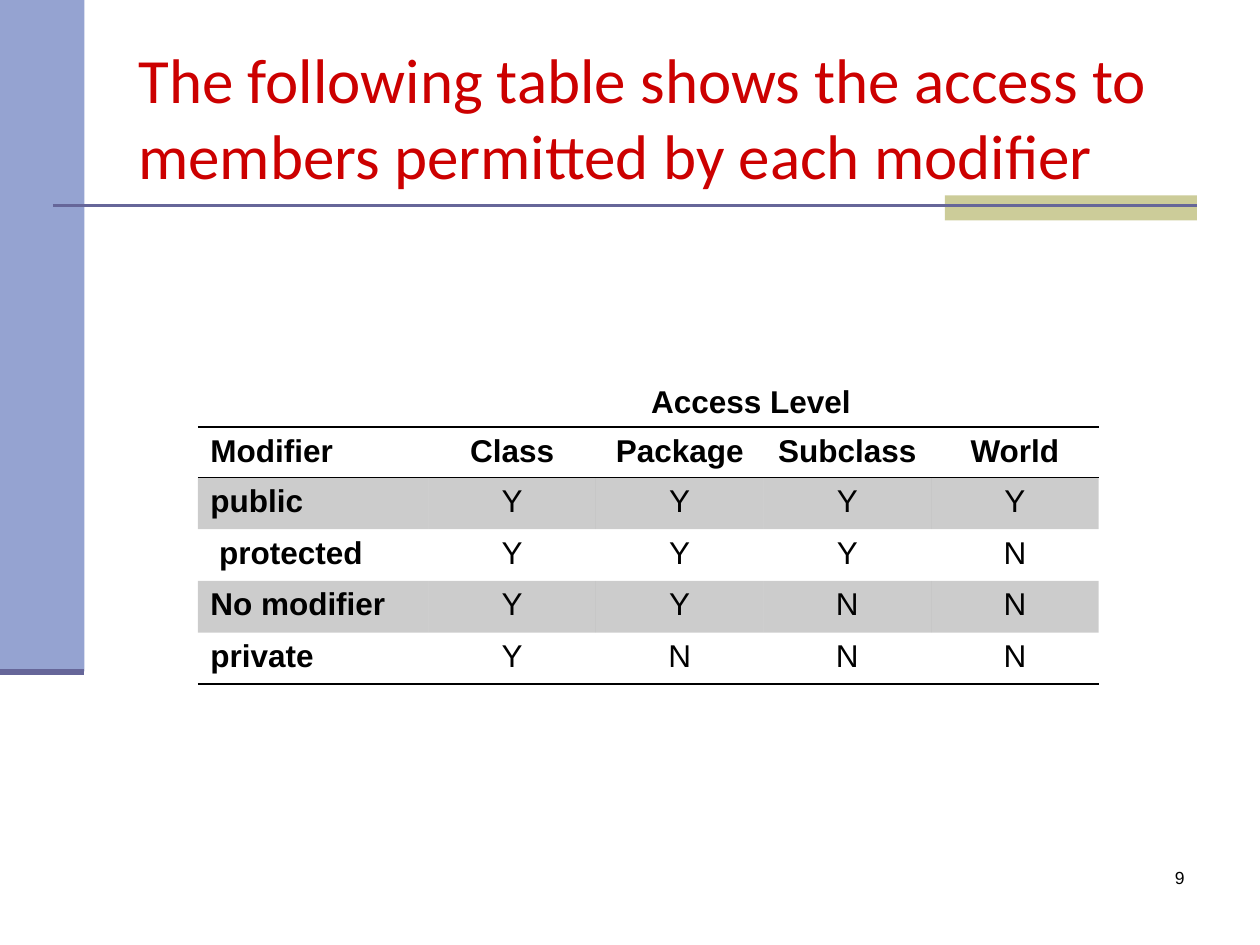
from dataclasses import dataclass

from lxml.etree import SubElement
from pptx import Presentation
from pptx.dml.color import RGBColor as RGB
from pptx.enum.shapes import MSO_CONNECTOR as Connector, MSO_SHAPE as Shape
from pptx.enum.text import MSO_ANCHOR as Anchor, PP_ALIGN as Align
from pptx.oxml import parse_xml
from pptx.oxml.ns import nsdecls, qn
from pptx.util import Inches, Pt


@dataclass(frozen=True)
class Theme:
    sidebar: str = "95A3D1"
    accent: str = "CCCC99"
    rule: str = "666699"
    title: str = "CC0000"
    ink: str = "000000"
    band_alpha: int = 20
    heading_font: str = "Calibri"
    body_font: str = "Arial"
    title_size: int = 36
    body_size: int = 18
    number_size: int = 10
    plain_table: str = "{2D5ABB26-0587-4C30-8999-92F81FD0307C}"


class SlideBuilder:
    def __init__(self, slide, theme):
        self.slide = slide
        self.theme = theme

    def rect(self, x, y, w, h, color):
        sp = self.slide.shapes.add_shape(
            Shape.RECTANGLE, Inches(x), Inches(y), Inches(w), Inches(h))
        sp.shadow.inherit = False
        sp.fill.solid()
        sp.fill.fore_color.rgb = RGB.from_string(color)
        sp.line.fill.background()

    def rule(self, x1, x2, y, width):
        line = self.slide.shapes.add_connector(
            Connector.STRAIGHT, Inches(x1), Inches(y), Inches(x2), Inches(y))
        line.line.color.rgb = RGB.from_string(self.theme.rule)
        line.line.width = Pt(width)
        SubElement(line.element.spPr, qn("a:effectLst"))

    def style(self, p, size, align, color=None, font=None, bold=False):
        p.alignment = align
        p.font.size = Pt(size)
        p.font.name = font or self.theme.body_font
        p.font.bold = bold
        p.font.color.rgb = RGB.from_string(color or self.theme.ink)

    def text(self, text, x, y, w, h, size, align, anchor=Anchor.TOP, **font):
        sp = self.slide.shapes.add_textbox(
            Inches(x), Inches(y), Inches(w), Inches(h))
        tf = sp.text_frame
        tf.word_wrap = True
        tf.vertical_anchor = anchor
        p = tf.paragraphs[0]
        p.text = text
        self.style(p, size, align, **font)

    def borders(self, cell, sides):
        props = cell._tc.get_or_add_tcPr()
        for i, side in enumerate(sides):
            props.insert(i, parse_xml(
                f'<a:ln{side} {nsdecls("a")} w="{Pt(1)}"><a:solidFill>'
                f'<a:srgbClr val="{self.theme.ink}"/></a:solidFill></a:ln{side}>'))

    def band(self, cell):
        cell.fill.solid()
        cell.fill.fore_color.rgb = RGB.from_string(self.theme.ink)
        color = next(cell._tc.tcPr.iter(qn("a:srgbClr")))
        SubElement(color, qn("a:alpha"), val=str(self.theme.band_alpha * 1000))

    def table(self, rows, x, y, widths, heights):
        frame = self.slide.shapes.add_table(
            len(rows), len(widths), Inches(x), Inches(y),
            Inches(sum(widths)), Inches(sum(heights)))
        table = frame.table
        next(frame.element.iter(qn("a:tableStyleId"))).text = self.theme.plain_table
        for column, width in zip(table.columns, widths):
            column.width = Inches(width)
        for r, (row, height) in enumerate(zip(rows, heights)):
            table.rows[r].height = Inches(height)
            for c, value in enumerate(row):
                cell = table.cell(r, c)
                cell.text = value
                self.style(cell.text_frame.paragraphs[0], self.theme.body_size,
                           Align.CENTER if c else Align.LEFT,
                           bold=r == 0 or c == 0)
                if r % 2:
                    self.band(cell)
                else:
                    cell.fill.background()
                if r == 0:
                    self.borders(cell, "TB")
                elif r == len(rows) - 1:
                    self.borders(cell, "B")
        return table


ACCESS = [
    ("Modifier", "Class", "Package", "Subclass", "World"),
    ("public", *"YYYY"),
    ("protected", *"YYYN"),
    ("No modifier", *"YYNN"),
    ("private", *"YNNN"),
]


def main():
    prs = Presentation()
    prs.slide_width, prs.slide_height = Inches(10), Inches(7.5)
    theme = Theme()
    s = SlideBuilder(prs.slides.add_slide(prs.slide_layouts[6]), theme)

    s.rect(0, 0, 0.67, 5.33, theme.sidebar)
    s.rect(7.5, 1.55, 2, 0.2, theme.accent)
    s.rule(0.42, 9.5, 1.63, 1.5)
    s.rule(0, 0.67, 5.33, 3.5)

    s.text("The following table shows the access to members permitted by each modifier",
           1, 0.3, 8.5, 1.25, theme.title_size, Align.LEFT, Anchor.MIDDLE,
           color=theme.title, font=theme.heading_font)
    s.text("9", 7.42, 6.83, 2.08, 0.5, theme.number_size, Align.RIGHT)

    table = s.table(ACCESS, 1.57, 3.39, [1.83] + [1.33] * 4, [0.38] + [0.41] * 4)
    table.cell(2, 0).margin_left = Inches(0.17)
    s.text("Access Level", 3.46, 2.98, 5, 0.4, theme.body_size, Align.CENTER, bold=True)

    prs.save("out.pptx")


if __name__ == "__main__":
    main()
